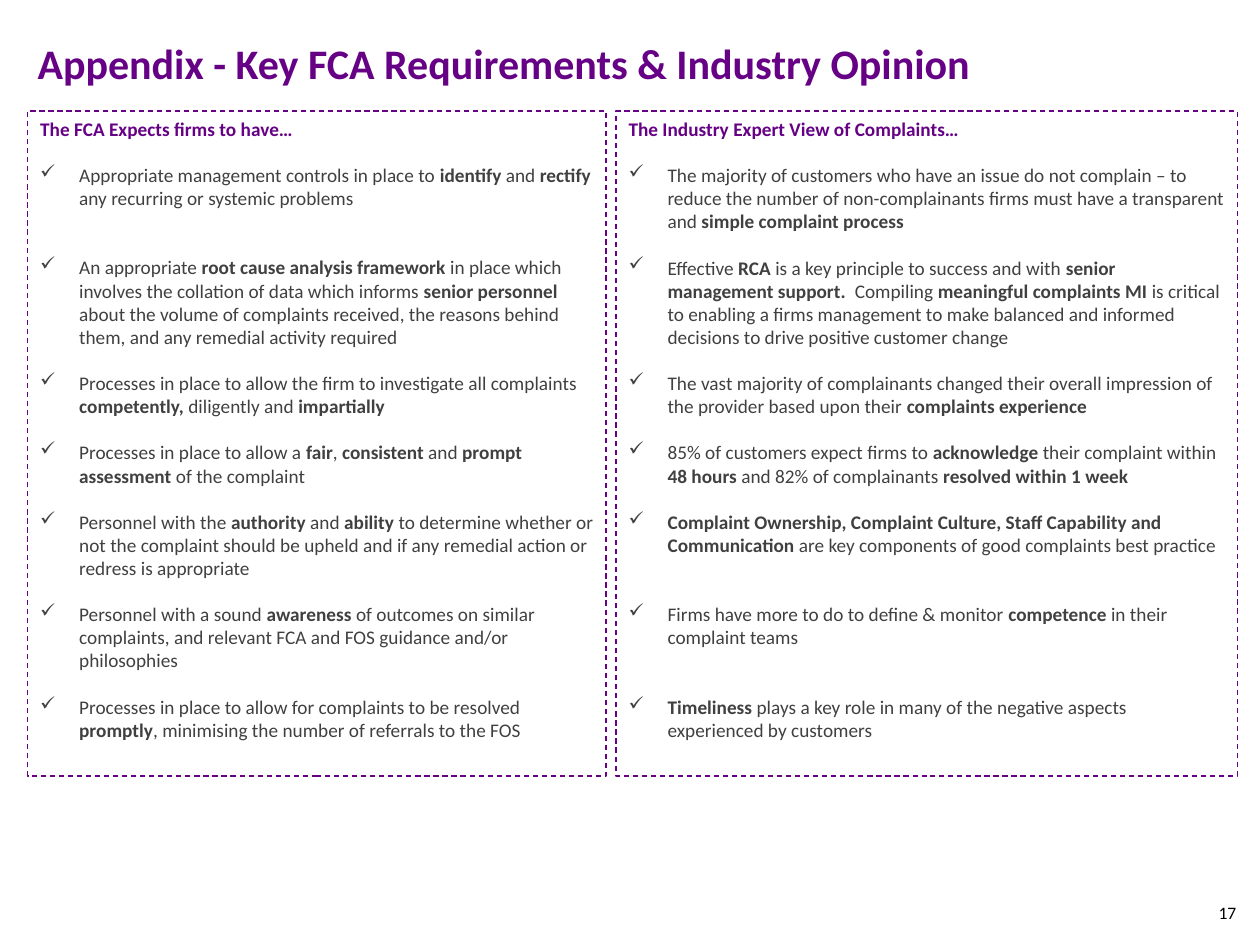
import pptx
import pptx.util
import pptx.dml.color
import pptx.enum.dml
import pptx.enum.shapes
import pptx.enum.text
import pptx.oxml.ns
from dataclasses import dataclass
from lxml import etree

Inches, Pt = pptx.util.Inches, pptx.util.Pt
RGB = pptx.dml.color.RGBColor
Anchor = pptx.enum.text.MSO_ANCHOR
Align = pptx.enum.text.PP_ALIGN


@dataclass(frozen=True)
class Theme:
    """Colours, font and type sizes of the slide."""
    face: str = "Calibri"
    brand: RGB = RGB(0x66, 0x00, 0x85)
    body: RGB = RGB(0x40, 0x40, 0x40)
    black: RGB = RGB(0, 0, 0)
    title: float = 24
    text: float = 11
    small: float = 10
    gap: float = 13.2


THEME = Theme()

FIRMS = [
    (1, "Appropriate management controls in place to **identify** and **rectify **"
        "any recurring or systemic problems"),
    (2, "An appropriate **root cause analysis framework **in place which involves the "
        "collation of data which informs **senior personnel **about the volume of complaints "
        "received, the reasons behind them, and any remedial activity required"),
    (1, "Processes in place to allow the firm to investigate all complaints "
        "**competently, **diligently and **impartially**"),
    (1, "Processes in place to allow a **fair**, **consistent** and **prompt assessment** "
        "of the complaint"),
    (1, "Personnel with the **authority** and **ability** to determine whether or not the "
        "complaint should be upheld and if any remedial action or redress is appropriate"),
    (1, "Personnel with a sound **awareness **of outcomes on similar complaints, and "
        "relevant FCA and FOS guidance and/or philosophies"),
    (1, "Processes in place to allow for complaints to be resolved **promptly**, "
        "minimising the number of referrals to the FOS"),
]

EXPERTS = [
    (1, "The majority of customers who have an issue do not complain – to reduce the number "
        "of non-complainants firms must have a transparent and **simple complaint process**"),
    (1, "Effective **RCA** is a key principle to success and with **senior management "
        "support.  **Compiling **meaningful complaints MI** is critical to enabling a firms "
        "management to make balanced and informed decisions to drive positive customer change"),
    (1, "The vast majority of complainants changed their overall impression of the provider "
        "based upon their **complaints experience**"),
    (1, "85% of customers expect firms to **acknowledge** their complaint within **48 hours "
        "**and 82% of complainants **resolved within 1 week**"),
    (1, "**Complaint Ownership, Complaint Culture, Staff Capability and Communication** are "
        "key components of good complaints best practice"),
    (2, "Firms have more to do to define & monitor **competence** in their complaint teams"),
    (2, "**Timeliness** plays a key role in many of the negative aspects experienced by "
        "customers"),
]


def style(para, size, color, bold=None):
    """Set the font of a whole paragraph."""
    font = para.font
    font.name, font.size, font.bold = THEME.face, Pt(size), bold
    font.color.rgb = color


def add_line(slide, box, text, size, color, bold=False, align=Align.LEFT,
             anchor=Anchor.MIDDLE, foot=0.05):
    """Place one line of text in a box."""
    frame = slide.shapes.add_textbox(*map(Inches, box)).text_frame
    frame.word_wrap = True
    frame.vertical_anchor = anchor
    frame.margin_bottom = Inches(foot)
    para = frame.paragraphs[0]
    para.text, para.alignment = text, align
    style(para, size, color, bold)


def add_tick(frame, gap, text):
    """Add a ticked item whose starred parts are bold."""
    para = frame.add_paragraph()
    para.alignment = Align.LEFT
    para.space_before = Pt(gap * THEME.gap)
    props = para._p.get_or_add_pPr()
    props.set("marL", str(Inches(0.31)))
    props.set("indent", str(-Inches(0.31)))
    etree.SubElement(props, pptx.oxml.ns.qn("a:buChar")).set("char", "✓")
    style(para, THEME.text, THEME.body)
    for i, part in enumerate(text.split("**")):
        if part:
            run = para.add_run()
            run.text, run.font.bold = part, i % 2 == 1


def add_panel(slide, box, head, items):
    """Draw a dashed panel with a heading and ticked items."""
    rect = pptx.enum.shapes.MSO_SHAPE.RECTANGLE
    panel = slide.shapes.add_shape(rect, *map(Inches, box))
    panel.shadow.inherit = False
    panel.fill.background()
    panel.line.color.rgb = THEME.brand
    panel.line.width = Pt(0.75)
    panel.line.dash_style = pptx.enum.dml.MSO_LINE.DASH
    frame = panel.text_frame
    frame.word_wrap = True
    frame.vertical_anchor = Anchor.TOP
    para = frame.paragraphs[0]
    para.text, para.alignment = head, Align.LEFT
    style(para, THEME.text, THEME.brand, True)
    for gap, text in items:
        add_tick(frame, gap, text)


def main():
    """Build the slide and save it."""
    deck = pptx.Presentation()
    deck.slide_width, deck.slide_height = Inches(10), Inches(7.5)
    slide = deck.slides.add_slide(deck.slide_layouts[6])
    add_line(slide, (7.58, 7.04, 2.33, 0.4), "17", THEME.small, THEME.black,
             align=Align.RIGHT)
    add_line(slide, (0.2, -0.14, 9.48, 0.92),
             "Appendix - Key FCA Requirements & Industry Opinion",
             THEME.title, THEME.brand, True, anchor=Anchor.BOTTOM, foot=0.08)
    add_panel(slide, (0.22, 0.88, 4.59, 5.28), "The FCA Expects firms to have…", FIRMS)
    add_panel(slide, (4.89, 0.88, 4.93, 5.28), "The Industry Expert View of Complaints…",
              EXPERTS)
    deck.save("out.pptx")


if __name__ == "__main__":
    main()
